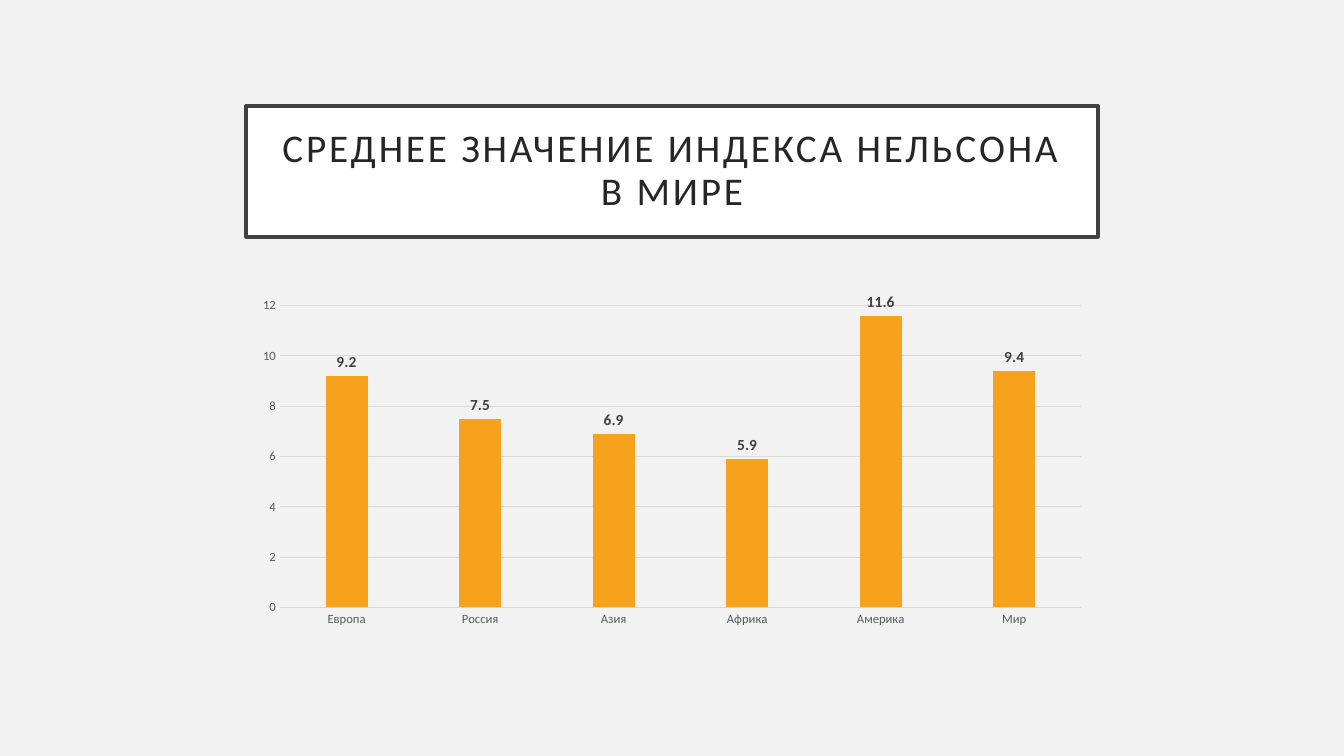
from pptx import Presentation
from pptx.chart.data import CategoryChartData
from pptx.dml.color import RGBColor
from pptx.enum import chart as ch, text as tx
from pptx.util import Inches, Pt

FONT = "Calibri"
COLORS = {
    "background": "F2F2F2",
    "panel": "FFFFFF",
    "frame": "404040",
    "title": "262626",
    "bar": "F6A21D",
    "axis_text": "595959",
    "grid": "D9D9D9",
    "label": "404040",
}
NELSON_INDEX = {
    "Европа": 9.2,
    "Россия": 7.5,
    "Азия": 6.9,
    "Африка": 5.9,
    "Америка": 11.6,
    "Мир": 9.4,
}


def rgb(name):
    return RGBColor.from_string(COLORS[name])


def apply(target, values):
    for attribute, value in values.items():
        setattr(target, attribute, value)


def paint(fill, color):
    fill.solid()
    fill.fore_color.rgb = rgb(color)


def style_font(font, size, color, bold=False):
    apply(font, {"name": FONT, "size": Pt(size), "bold": bold})
    font.color.rgb = rgb(color)


def style_line(line, color, width):
    line.color.rgb = rgb(color)
    line.width = Pt(width)


def place(left, top, width, height):
    return [Inches(value) for value in (left, top, width, height)]


def add_title(slide, wording):
    title = slide.shapes.title
    box = place(2.44, 1.05, 8.45, 1.3)
    apply(title, dict(zip(("left", "top", "width", "height"), box)))
    paint(title.fill, "panel")
    style_line(title.line, "frame", 2.5)

    frame = title.text_frame
    frame.text = wording
    sides = ("left", "top", "right", "bottom")
    apply(frame, {f"margin_{side}": Inches(0.2) for side in sides})
    apply(frame, {
        "word_wrap": True,
        "auto_size": tx.MSO_AUTO_SIZE.NONE,
        "vertical_anchor": tx.MSO_ANCHOR.MIDDLE,
    })
    heading = frame.paragraphs[0]
    apply(heading, {"alignment": tx.PP_ALIGN.CENTER, "line_spacing": 0.9})
    style_font(heading.runs[0].font, 28, "title")
    # Letter spacing in hundredths of a point
    heading.runs[0].font._element.set("spc", "200")


def style_axis(axis):
    apply(axis, {
        "major_tick_mark": ch.XL_TICK_MARK.NONE,
        "minor_tick_mark": ch.XL_TICK_MARK.NONE,
    })
    style_font(axis.tick_labels.font, 9, "axis_text")


def add_index_chart(slide):
    data = CategoryChartData()
    data.categories = list(NELSON_INDEX)
    data.add_series("Series 1", list(NELSON_INDEX.values()))
    chart = slide.shapes.add_chart(
        ch.XL_CHART_TYPE.COLUMN_CLUSTERED, *place(2.44, 2.89, 8.45, 3.39), data
    ).chart
    apply(chart, {"has_legend": False, "has_title": False})
    apply(chart.font, {"name": FONT, "size": Pt(10)})

    # Axes and grid
    regions, scale = chart.category_axis, chart.value_axis
    for axis in (regions, scale):
        style_axis(axis)
    style_line(regions.format.line, "grid", 0.75)
    apply(scale, {
        "minimum_scale": 0,
        "maximum_scale": 12,
        "major_unit": 2,
        "has_major_gridlines": True,
    })
    scale.format.line.fill.background()
    style_line(scale.major_gridlines.format.line, "grid", 0.75)

    # Bars and their values
    plot = chart.plots[0]
    apply(plot, {"gap_width": 219, "overlap": -27, "vary_by_categories": False})
    bars = plot.series[0]
    paint(bars.format.fill, "bar")
    labels = bars.data_labels
    apply(labels, {
        "show_value": True,
        "position": ch.XL_LABEL_POSITION.OUTSIDE_END,
    })
    style_font(labels.font, 11, "label", bold=True)


def main():
    deck = Presentation()
    apply(deck, {"slide_width": Inches(13.33), "slide_height": Inches(7.5)})
    slide = deck.slides.add_slide(deck.slide_layouts[5])
    paint(slide.background.fill, "background")
    add_title(slide, "СРЕДНЕЕ ЗНАЧЕНИЕ ИНДЕКСА НЕЛЬСОНА В МИРЕ")
    add_index_chart(slide)
    deck.save("out.pptx")


if __name__ == "__main__":
    main()
